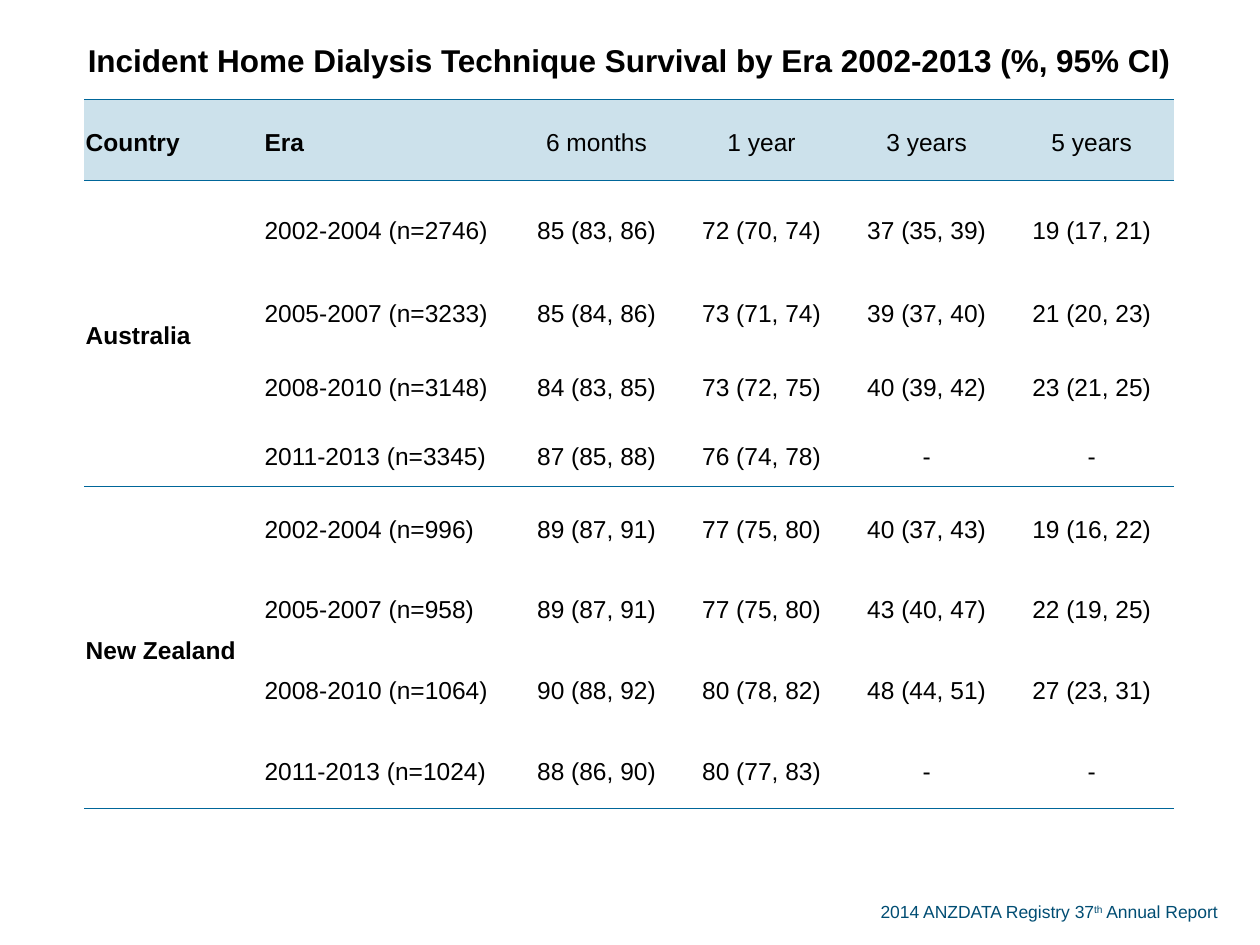
"""Build the home dialysis technique survival slide."""
import dataclasses

import lxml.etree
import pptx
import pptx.dml.color
import pptx.enum.text
import pptx.oxml.ns
import pptx.util

Inches = pptx.util.Inches
Pt = pptx.util.Pt
RGBColor = pptx.dml.color.RGBColor
ALIGN = pptx.enum.text.PP_ALIGN
ANCHOR = pptx.enum.text.MSO_ANCHOR


@dataclasses.dataclass(frozen=True)
class Theme:
    font: str = "Arial"
    ink: str = "000000"
    credit: str = "004D73"
    rule: str = "006699"
    header: str = "CCE1EB"
    title_size: int = 18
    body_size: int = 14
    credit_size: int = 10
    rule_width: float = 0.5


TITLE = "Incident Home Dialysis Technique Survival by Era 2002-2013 (%, 95% CI)"
HEADINGS = ["Country", "Era", "6 months", "1 year", "3 years", "5 years"]
SURVIVAL = {
    "Australia": [
        ["2002-2004 (n=2746)", "85 (83, 86)", "72 (70, 74)", "37 (35, 39)", "19 (17, 21)"],
        ["2005-2007 (n=3233)", "85 (84, 86)", "73 (71, 74)", "39 (37, 40)", "21 (20, 23)"],
        ["2008-2010 (n=3148)", "84 (83, 85)", "73 (72, 75)", "40 (39, 42)", "23 (21, 25)"],
        ["2011-2013 (n=3345)", "87 (85, 88)", "76 (74, 78)", "-", "-"],
    ],
    "New Zealand": [
        ["2002-2004 (n=996)", "89 (87, 91)", "77 (75, 80)", "40 (37, 43)", "19 (16, 22)"],
        ["2005-2007 (n=958)", "89 (87, 91)", "77 (75, 80)", "43 (40, 47)", "22 (19, 25)"],
        ["2008-2010 (n=1064)", "90 (88, 92)", "80 (78, 82)", "48 (44, 51)", "27 (23, 31)"],
        ["2011-2013 (n=1024)", "88 (86, 90)", "80 (77, 83)", "-", "-"],
    ],
}
COLUMN_WIDTHS = [1.42, 1.99] + [1.31] * 4
ROW_HEIGHTS = [0.66, 0.64, 0.75, 0.58, 0.59, 0.51] + [0.64] * 4
CREDIT = [("2014 ANZDATA Registry 37", 0), ("th", 30), (" Annual Report", 0)]


def apply(target, values):
    for name, value in values.items():
        setattr(target, name, value)


class SlideBuilder:
    def __init__(self, slide, theme):
        self.slide = slide
        self.theme = theme

    def style_font(self, font, size, color, bold=False):
        apply(font, {"name": self.theme.font, "size": Pt(size), "bold": bold})
        font.color.rgb = RGBColor.from_string(color)

    def credit(self, pieces, left, top, width, height):
        box = self.slide.shapes.add_textbox(
            Inches(left), Inches(top), Inches(width), Inches(height))
        box.text_frame.word_wrap = True
        paragraph = box.text_frame.paragraphs[0]
        for words, baseline in pieces:
            run = paragraph.add_run()
            run.text = words
            self.style_font(run.font, self.theme.credit_size, self.theme.credit)
            if baseline:
                run._r.get_or_add_rPr().set("baseline", str(baseline * 1000))

    def borders(self, cell, ruled_sides):
        properties = cell._tc.get_or_add_tcPr()
        qn = pptx.oxml.ns.qn
        for position, side in enumerate("LRTB"):
            line = lxml.etree.Element(
                qn(f"a:ln{side}"), w=str(Pt(self.theme.rule_width)))
            if side in ruled_sides:
                fill = lxml.etree.SubElement(line, qn("a:solidFill"))
                lxml.etree.SubElement(fill, qn("a:srgbClr"), val=self.theme.rule)
            else:
                lxml.etree.SubElement(line, qn("a:noFill"))
            properties.insert(position, line)

    def cell(self, cell, words, size, bold, centered, fill, ruled_sides):
        cell.text = words
        apply(cell, {
            "margin_left": Inches(0.01), "margin_right": Inches(0.01),
            "margin_top": Inches(0.01), "margin_bottom": 0,
            "vertical_anchor": ANCHOR.MIDDLE,
        })
        paragraph = cell.text_frame.paragraphs[0]
        apply(paragraph, {
            "alignment": ALIGN.CENTER if centered else ALIGN.LEFT,
            "line_spacing": 1.19, "space_after": Pt(14),
        })
        self.style_font(paragraph.font, size, self.theme.ink, bold)
        for run in paragraph.runs:
            self.style_font(run.font, size, self.theme.ink, bold)
        if fill:
            cell.fill.solid()
            cell.fill.fore_color.rgb = RGBColor.from_string(fill)
        else:
            cell.fill.background()
        self.borders(cell, ruled_sides)

    def survival_table(self, left, top):
        rows = [[TITLE] + [""] * 5, HEADINGS]
        ruled_rows = {0, 1}
        country_spans = []
        for country, eras in SURVIVAL.items():
            first = len(rows)
            rows += [[country if i == 0 else ""] + era for i, era in enumerate(eras)]
            country_spans.append((first, len(rows) - 1))
            ruled_rows.add(len(rows) - 1)
        table = self.slide.shapes.add_table(
            len(rows), len(HEADINGS), Inches(left), Inches(top),
            Inches(sum(COLUMN_WIDTHS)), Inches(sum(ROW_HEIGHTS))).table
        apply(table, {"first_row": False, "horz_banding": False})
        for column, width in zip(table.columns, COLUMN_WIDTHS):
            column.width = Inches(width)
        for row, height in zip(table.rows, ROW_HEIGHTS):
            row.height = Inches(height)
        table.cell(0, 0).merge(table.cell(0, len(HEADINGS) - 1))
        for first, last in country_spans:
            table.cell(first, 0).merge(table.cell(last, 0))
        for r, row in enumerate(rows):
            for c, words in enumerate(row):
                cell = table.cell(r, c)
                height = cell.span_height if cell.is_merge_origin else 1
                sides = "T" if r - 1 in ruled_rows else ""
                sides += "B" if r + height - 1 in ruled_rows else ""
                self.cell(
                    cell, words,
                    size=self.theme.title_size if r == 0 else self.theme.body_size,
                    bold=r == 0 or c == 0 or (r == 1 and c == 1),
                    centered=r == 0 or c > 1,
                    fill=self.theme.header if r == 1 else None,
                    ruled_sides=sides)


def main():
    deck = pptx.Presentation()
    apply(deck, {"slide_width": Inches(10), "slide_height": Inches(7.5)})
    builder = SlideBuilder(deck.slides.add_slide(deck.slide_layouts[6]), Theme())
    builder.credit(CREDIT, 6.89, 7.1, 2.99, 0.27)
    builder.survival_table(0.67, 0.13)
    deck.save("out.pptx")


if __name__ == "__main__":
    main()
